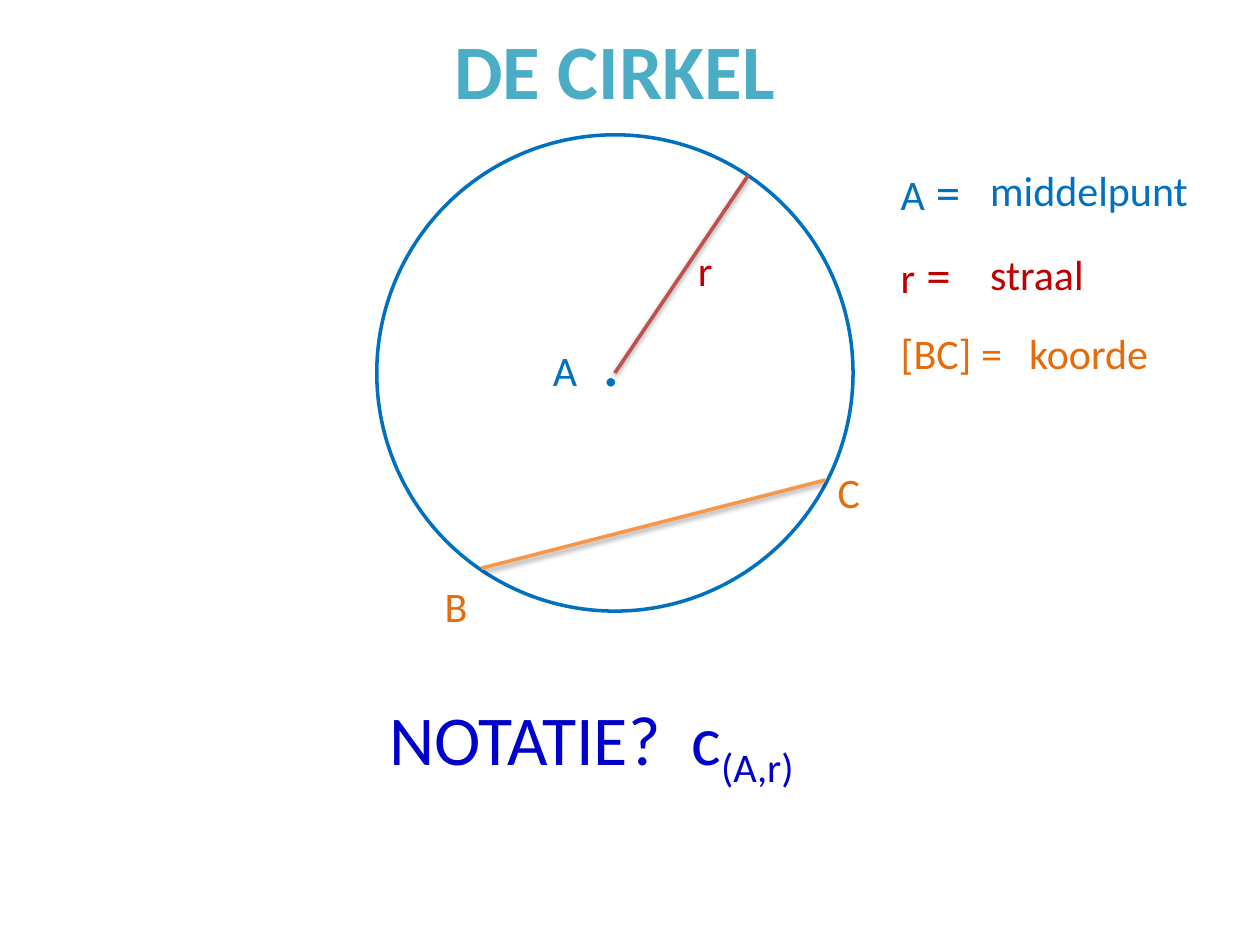
from dataclasses import dataclass

from lxml.etree import SubElement
from pptx import Presentation
from pptx.dml.color import RGBColor
from pptx.enum.shapes import MSO_CONNECTOR, MSO_SHAPE
from pptx.enum.text import MSO_AUTO_SIZE, PP_ALIGN
from pptx.oxml import parse_xml
from pptx.oxml.ns import nsdecls, qn
from pptx.util import Inches, Pt


@dataclass(frozen=True)
class Theme:
    font: str = "Calibri"
    white: str = "FFFFFF"
    title: str = "4BACC6"
    circle: str = "0070C0"
    radius: str = "C00000"
    radius_line: str = "C0504D"
    chord: str = "E46C0A"
    chord_line: str = "F79646"
    notation: str = "0000CC"
    label_size: int = 24
    equals_size: int = 28
    notation_size: int = 40
    title_size: int = 44
    line_width: int = 2


def add_run(paragraph, text, *, font, size, color, bold=False, baseline=None, outline=None):
    run = paragraph.add_run()
    run.text = text
    run.font.name = font
    run.font.size = Pt(size)
    run.font.bold = bold
    run.font.color.rgb = RGBColor.from_string(color)
    properties = run.font._element
    if baseline is not None:
        properties.set("baseline", str(baseline * 1000))
    if outline:
        properties.insert(0, parse_xml(
            f'<a:ln {nsdecls("a")} w="{Pt(0.75)}"><a:solidFill>'
            f'<a:srgbClr val="{outline}"/></a:solidFill></a:ln>'))


class SlideBuilder:
    def __init__(self, slide, theme):
        self.slide = slide
        self.theme = theme

    def text(self, left, top, width, height, runs, color, align=PP_ALIGN.LEFT, tab=None):
        """Add a text box; each run is (text, size) or (text, size, format)."""
        box = self.slide.shapes.add_textbox(
            Inches(left), Inches(top), Inches(width), Inches(height))
        frame = box.text_frame
        frame.word_wrap = True
        frame.auto_size = MSO_AUTO_SIZE.SHAPE_TO_FIT_TEXT
        paragraph = frame.paragraphs[0]
        paragraph.alignment = align
        if tab:
            stops = SubElement(paragraph._p.get_or_add_pPr(), qn("a:tabLst"))
            SubElement(stops, qn("a:tab"), pos=str(Inches(tab)), algn="l")
        for content, size, *extra in runs:
            options = extra[0] if extra else {}
            add_run(paragraph, content, font=self.theme.font, size=size, color=color, **options)

    def label(self, left, top, content, color, width=1.1):
        self.text(left, top, width, 0.5, [(content, self.theme.label_size)], color)

    def circle(self, center_x, center_y, radius, color):
        shape = self.slide.shapes.add_shape(
            MSO_SHAPE.OVAL, Inches(center_x - radius), Inches(center_y - radius),
            Inches(2 * radius), Inches(2 * radius))
        shape.shadow.inherit = False
        shape.fill.solid()
        shape.fill.fore_color.rgb = RGBColor.from_string(self.theme.white)
        shape.line.color.rgb = RGBColor.from_string(color)
        shape.line.width = Pt(self.theme.line_width)

    def line(self, start, end, color):
        connector = self.slide.shapes.add_connector(
            MSO_CONNECTOR.STRAIGHT, *map(Inches, start + end))
        connector.line.color.rgb = RGBColor.from_string(color)
        connector.line.width = Pt(self.theme.line_width)
        # Soft shadow straight below the line
        connector._element.spPr.append(parse_xml(
            f'<a:effectLst {nsdecls("a")}><a:outerShdw blurRad="{Pt(3.1)}" dist="{Pt(1.6)}" '
            'dir="5400000" rotWithShape="0"><a:srgbClr val="000000"><a:alpha val="38000"/>'
            '</a:srgbClr></a:outerShdw></a:effectLst>'))


def main():
    presentation = Presentation()
    presentation.slide_width, presentation.slide_height = Inches(10), Inches(7.5)
    theme = Theme()
    builder = SlideBuilder(presentation.slides.add_slide(presentation.slide_layouts[6]), theme)

    # Title
    builder.text(-0.24, 0.13, 10.24, 0.84,
                 [("DE CIRKEL", theme.title_size, {"bold": True, "outline": theme.white})],
                 theme.title, PP_ALIGN.CENTER)

    # Circle with its radius, centre and chord
    center = (4.88, 2.96)
    builder.circle(*center, 1.89, theme.circle)
    builder.line(center, (5.94, 1.39), theme.radius_line)
    builder.text(4.29, 2.46, 1.1, 0.77,
                 [("A", theme.label_size), ("\t.", theme.notation_size)],
                 theme.circle, tab=0.39)
    builder.label(5.44, 1.89, "r", theme.radius)
    builder.line((3.82, 4.51), (6.55, 3.81), theme.chord_line)
    builder.label(3.43, 4.56, "B", theme.chord)
    builder.label(6.55, 3.65, "C", theme.chord)

    # Legend
    legend_left, meaning_left = 7.05, 7.76
    for top, symbol, meaning, color in (
        (1.23, "A", "middelpunt", theme.circle),
        (1.89, "r", "straal", theme.radius),
    ):
        builder.text(legend_left, top, 1.1, 0.57,
                     [(symbol, theme.label_size), (" =", theme.equals_size)], color)
        builder.label(meaning_left, top + 0.03, meaning, color, width=1.81)
    builder.label(legend_left, 2.55, "[BC] =", theme.chord)
    builder.label(8.07, 2.55, "koorde", theme.chord, width=1.37)

    # Notation
    builder.text(2.99, 5.47, 2.56, 0.77, [("NOTATIE?", theme.notation_size)], theme.notation)
    builder.text(5.39, 5.47, 2.13, 0.77,
                 [("c", theme.notation_size),
                  ("(A,r)", theme.notation_size, {"baseline": -25})], theme.notation)

    presentation.save("out.pptx")


if __name__ == "__main__":
    main()
